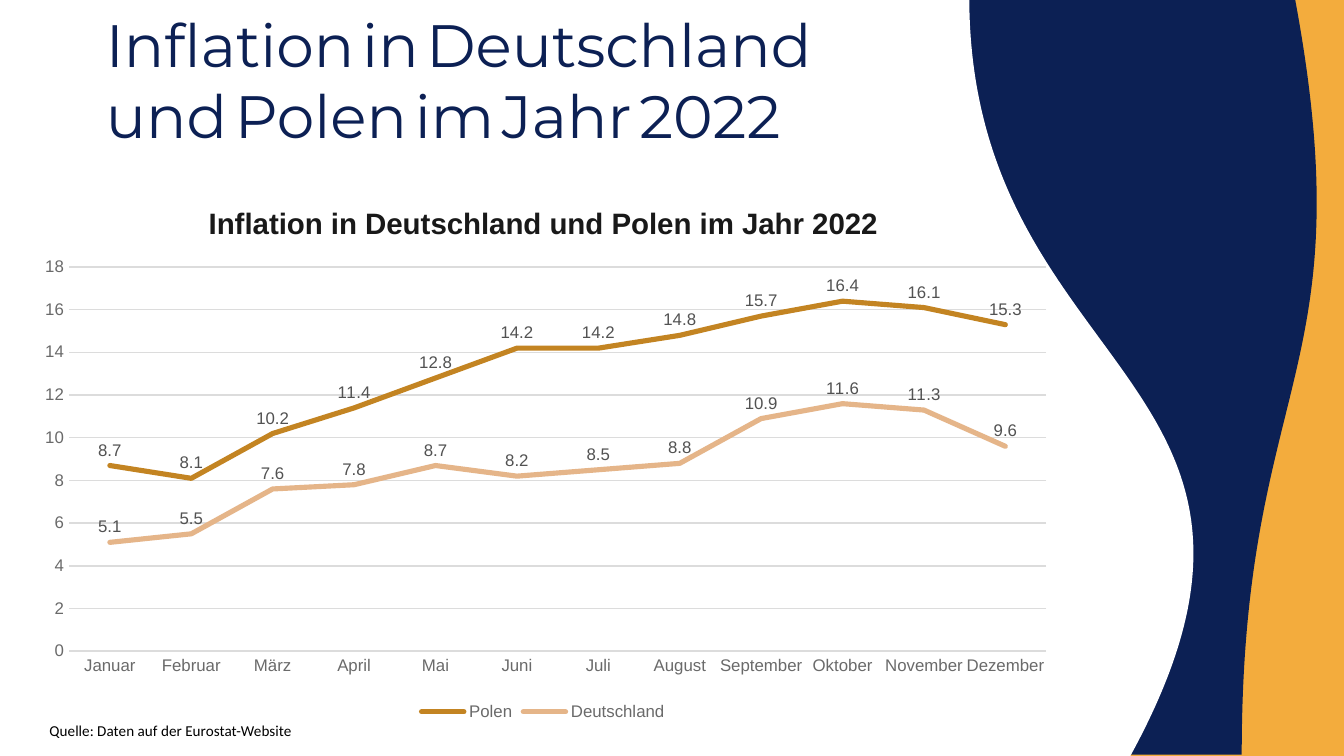
from lxml.etree import SubElement
from pptx import Presentation
from pptx.chart.data import CategoryChartData
from pptx.dml.color import RGBColor
from pptx.enum.chart import XL_CHART_TYPE, XL_LABEL_POSITION, XL_LEGEND_POSITION, XL_TICK_MARK
from pptx.enum.shapes import MSO_SHAPE
from pptx.enum.text import MSO_ANCHOR
from pptx.oxml.ns import qn
from pptx.util import Inches, Pt

NAVY, ORANGE, WHITE, BLACK = "0C2054", "F3AC3D", "FFFFFF", "000000"
GRID, AXIS_TEXT, LABEL_TEXT, TITLE_TEXT = "DCDCDC", "6A6A6A", "525252", "191919"
HEADING = "Inflation in Deutschland und Polen im Jahr 2022"
SOURCE = "Quelle: Daten auf der Eurostat-Website"
MONTHS = ["Januar", "Februar", "März", "April", "Mai", "Juni", "Juli",
          "August", "September", "Oktober", "November", "Dezember"]
SERIES = [
    ("Polen", "C38422", [8.7, 8.1, 10.2, 11.4, 12.8, 14.2, 14.2, 14.8, 15.7, 16.4, 16.1, 15.3]),
    ("Deutschland", "E5B589", [5.1, 5.5, 7.6, 7.8, 8.7, 8.2, 8.5, 8.8, 10.9, 11.6, 11.3, 9.6]),
]
WAVES = [
    ((5.52, 1.3, 5.62, 3.01), NAVY, True),
    ((1.66, -1.69, 5.67, 9), WHITE, False),
]


def color(value):
    return RGBColor.from_string(value)


def format_font(font, size, fill, name="Arial", bold=False):
    font.size = Pt(size)
    font.name = name
    font.bold = bold
    font.color.rgb = color(fill)


def add_text(slide, box, runs, inset=0.05, anchor=MSO_ANCHOR.TOP, line_spacing=1.0,
             space_after=0, baseline=0):
    frame = slide.shapes.add_textbox(*map(Inches, box)).text_frame
    frame.word_wrap = True
    frame.vertical_anchor = anchor
    frame.margin_top = frame.margin_bottom = Inches(inset)
    frame.margin_left = frame.margin_right = Inches(0.1)
    paragraph = frame.paragraphs[0]
    paragraph.line_spacing = line_spacing
    paragraph.space_after = Pt(space_after)
    for text, font in runs:
        run = paragraph.add_run()
        run.text = text
        format_font(run.font, **font)
        if baseline:
            run.font._element.set("baseline", str(baseline * 1000))


def add_wave(slide, box, fill, flipped):
    shape = slide.shapes.add_shape(MSO_SHAPE.FLOWCHART_DOCUMENT, *map(Inches, box))
    shape.shadow.inherit = False
    shape.fill.solid()
    shape.fill.fore_color.rgb = color(fill)
    shape.line.fill.background()
    shape.rotation = 270
    if flipped:
        shape._element.spPr.find(qn("a:xfrm")).set("flipH", "1")


def set_layout(parent, index, **values):
    for old in parent.findall(qn("c:layout")):
        parent.remove(old)
    layout = SubElement(parent, qn("c:layout"))
    parent.insert(index, layout)
    manual = SubElement(layout, qn("c:manualLayout"))
    if "w" in values:
        SubElement(manual, qn("c:layoutTarget")).set("val", "inner")
    for side in ("x", "y"):
        SubElement(manual, qn(f"c:{side}Mode")).set("val", "edge")
    for key, value in values.items():
        SubElement(manual, qn(f"c:{key}")).set("val", str(value))


def add_inflation_chart(slide):
    data = CategoryChartData()
    data.categories = MONTHS
    for name, _, values in SERIES:
        data.add_series(name, values)
    chart = slide.shapes.add_chart(
        XL_CHART_TYPE.LINE, *map(Inches, (0.14, 1.36, 7.8, 4.05)), data).chart
    format_font(chart.font, 10, TITLE_TEXT)

    chart.has_title = True
    paragraph = chart.chart_title.text_frame.paragraphs[0]
    run = paragraph.add_run()
    run.text = HEADING
    format_font(run.font, 15.8, TITLE_TEXT, bold=True)
    set_layout(chart.chart_title._element, 1, x=0.176, y=0.029)
    set_layout(chart._chartSpace.chart.plotArea, 0, x=0.048, y=0.155, w=0.932, h=0.706)

    chart.has_legend = True
    chart.legend.position = XL_LEGEND_POSITION.BOTTOM
    chart.legend.include_in_layout = False
    format_font(chart.legend.font, 9, AXIS_TEXT)

    for axis in (chart.category_axis, chart.value_axis):
        axis.major_tick_mark = axis.minor_tick_mark = XL_TICK_MARK.NONE
        format_font(axis.tick_labels.font, 9, AXIS_TEXT)
    chart.category_axis.format.line.color.rgb = color(GRID)
    chart.category_axis.format.line.width = Pt(1)
    value_axis = chart.value_axis
    value_axis.minimum_scale, value_axis.maximum_scale, value_axis.major_unit = 0, 18, 2
    value_axis.format.line.fill.background()
    value_axis.major_gridlines.format.line.color.rgb = color(GRID)
    value_axis.major_gridlines.format.line.width = Pt(0.75)

    for series, (_, line_color, _) in zip(chart.plots[0].series, SERIES):
        series.smooth = False
        line = series.format.line
        line.color.rgb = color(line_color)
        line.width = Pt(2.75)
        series._element.spPr.find(qn("a:ln")).set("cap", "rnd")
        labels = series.data_labels
        labels.show_value = True
        labels.position = XL_LABEL_POSITION.ABOVE
        format_font(labels.font, 9, LABEL_TEXT)


def main():
    presentation = Presentation()
    presentation.slide_width = Inches(10)
    presentation.slide_height = presentation.slide_width * 9 // 16
    slide = presentation.slides.add_slide(presentation.slide_layouts[6])
    slide.background.fill.solid()
    slide.background.fill.fore_color.rgb = color(ORANGE)
    for box, fill, flipped in WAVES:
        add_wave(slide, box, fill, flipped)

    word_font = dict(size=32, fill=NAVY, name="Montserrat")
    space_font = dict(size=18, fill=BLACK, name="Calibri", bold=True)
    heading_runs = []
    for word in HEADING.split():
        if heading_runs:
            heading_runs.append((" ", space_font))
        heading_runs.append((word, word_font))
    add_text(slide, (0.69, 0.21, 6.34, 0.76), heading_runs, inset=0.1, anchor=MSO_ANCHOR.MIDDLE)

    add_inflation_chart(slide)
    source_font = dict(size=14, fill=BLACK, name="Calibri")
    add_text(slide, (0.27, 5.28, 7.8, 0.34), [(SOURCE, source_font)],
             line_spacing=1.07, space_after=8, baseline=30)
    presentation.save("out.pptx")


if __name__ == "__main__":
    main()
